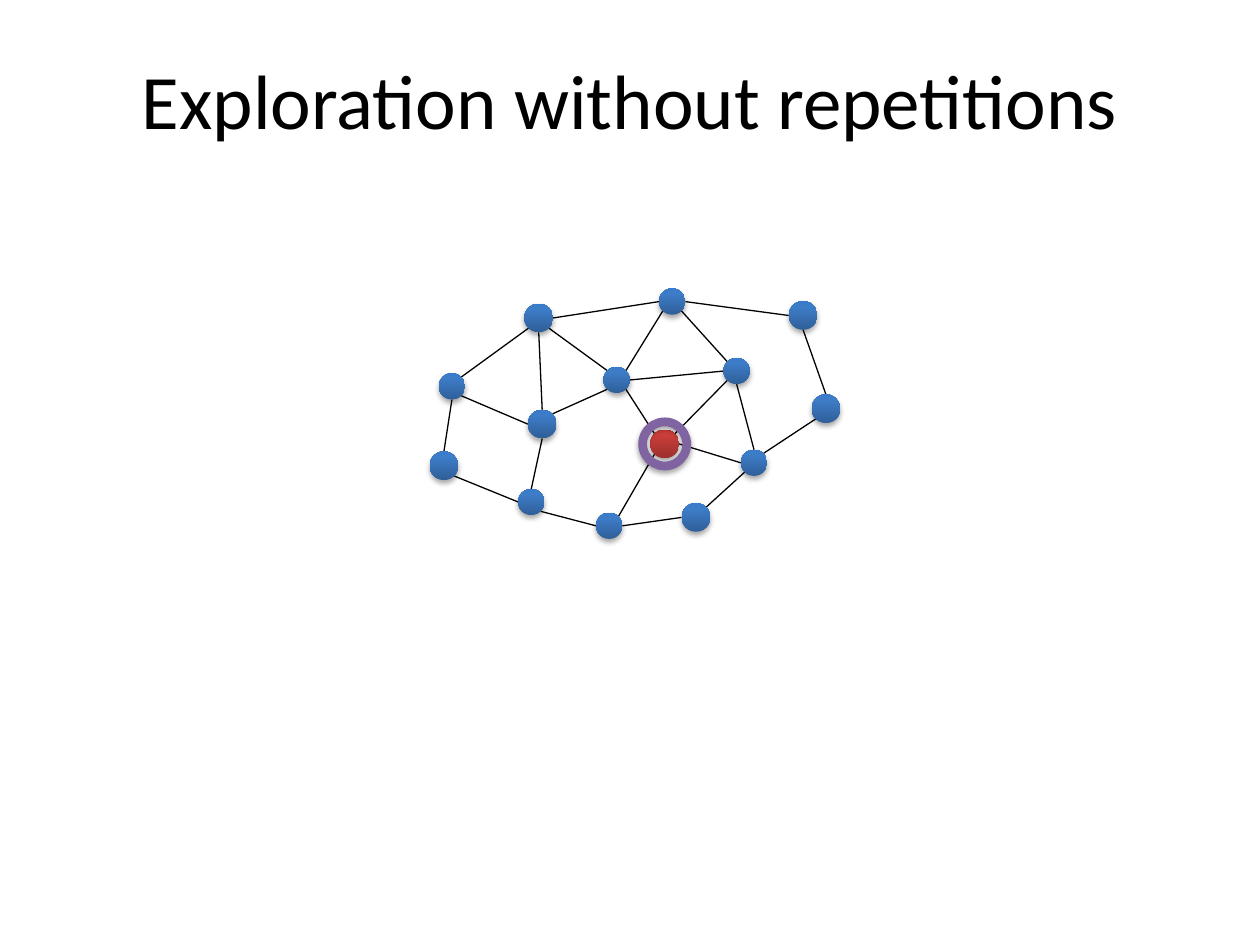
from copy import deepcopy
from dataclasses import dataclass
from math import cos, radians, sin

from lxml import etree
from pptx import Presentation
from pptx import util as u
from pptx.dml.color import RGBColor
from pptx.enum import shapes, text
from pptx.oxml.ns import qn

BLACK = RGBColor(0x00, 0x00, 0x00)
PURPLE = RGBColor(0x80, 0x64, 0xA2)
BLUES = (RGBColor(0x2F, 0x5F, 0x99), RGBColor(0x3D, 0x7C, 0xC7), RGBColor(0x3A, 0x7C, 0xCB))
REDS = (RGBColor(0x9C, 0x2F, 0x2D), RGBColor(0xCB, 0x3E, 0x3A), RGBColor(0xCE, 0x3B, 0x37))
STOPS = (0, 0.8, 1)
SMALL, BIG, RING = 0.53, 0.58, 0.89
SIDES = {side: radians(45 * i) for i, side in enumerate("E SE S SW W NW N NE".split())}


@dataclass
class Node:
    """A disc of the graph: centre and diameter in cm."""
    x: float
    y: float
    size: float
    hues: tuple = BLUES

    def site(self, side: str) -> tuple:
        """Point on the rim that faces a compass side."""
        turn, r = SIDES[side], self.size / 2
        return u.Cm(self.x + r * cos(turn)), u.Cm(self.y + r * sin(turn))


NODES = {
    "a": Node(10.86, 6.41, BIG),
    "b": Node(13.55, 6.08, SMALL),
    "c": Node(16.19, 6.36, BIG),
    "d": Node(9.11, 7.79, SMALL),
    "e": Node(12.43, 7.66, SMALL),
    "f": Node(14.85, 7.48, SMALL),
    "g": Node(16.65, 8.24, BIG),
    "h": Node(10.93, 8.55, BIG),
    "i": Node(8.95, 9.39, BIG),
    "j": Node(15.20, 9.33, SMALL),
    "k": Node(10.71, 10.12, SMALL),
    "l": Node(12.28, 10.60, SMALL),
    "m": Node(14.03, 10.43, BIG),
    "start": Node(13.40, 8.95, BIG, REDS),
}

# Each edge: node and side where it begins, node and side where it ends.
EDGES = [
    ("a", "E", "b", "W"), ("b", "E", "c", "W"), ("c", "S", "g", "N"),
    ("d", "NE", "a", "SW"), ("a", "S", "h", "N"), ("a", "SE", "e", "NW"),
    ("e", "NE", "b", "SW"), ("b", "SE", "f", "NW"), ("e", "E", "f", "W"),
    ("h", "NE", "e", "SW"), ("d", "SE", "h", "W"), ("d", "S", "i", "N"),
    ("i", "SE", "k", "W"), ("h", "S", "k", "N"), ("k", "SE", "l", "W"),
    ("l", "E", "m", "W"), ("j", "SW", "m", "NE"), ("g", "SW", "j", "NE"),
    ("j", "N", "f", "S"), ("e", "SE", "start", "NW"), ("f", "SW", "start", "NE"),
    ("start", "SW", "l", "NE"), ("start", "E", "j", "W"),
]


def cast(shape) -> None:
    """Give a shape a soft shadow below it."""
    shape.shadow.inherit = False
    effects = shape._element.spPr.find(qn("a:effectLst"))
    drop = etree.SubElement(effects, qn("a:outerShdw"), blurRad=str(u.Pt(3.1)),
                            dist=str(u.Pt(1.8)), dir="5400000", rotWithShape="0")
    tint = etree.SubElement(drop, qn("a:srgbClr"), val="000000")
    etree.SubElement(tint, qn("a:alpha"), val="35000")


def shade(shape, hues: tuple) -> None:
    """Fill with a three-stop gradient that runs upwards."""
    shape.fill.gradient()
    shape.fill.gradient_angle = 90
    stops = shape._element.spPr.find(".//" + qn("a:gsLst"))
    stops.append(deepcopy(stops[-1]))
    for stop, hue, place in zip(shape.fill.gradient_stops, hues, STOPS):
        stop.color.rgb = hue
        stop.position = place


def disc(slide, x: float, y: float, size: float):
    shape = slide.shapes.add_shape(
        shapes.MSO_SHAPE.OVAL, u.Cm(x - size / 2), u.Cm(y - size / 2), u.Cm(size), u.Cm(size))
    cast(shape)
    return shape


def draw_node(slide, node: Node) -> None:
    shape = disc(slide, node.x, node.y, node.size)
    shade(shape, node.hues)
    shape.line.fill.background()


def draw_edge(slide, tail: str, out: str, head: str, into: str) -> None:
    line = slide.shapes.add_connector(
        shapes.MSO_CONNECTOR.STRAIGHT, *NODES[tail].site(out), *NODES[head].site(into))
    line.line.color.rgb = BLACK
    line.line.width = u.Pt(0.75)
    etree.SubElement(line._element.spPr, qn("a:effectLst"))


def draw_ring(slide, node: Node) -> None:
    ring = disc(slide, node.x, node.y, RING)
    ring.fill.background()
    ring.line.color.rgb = PURPLE
    ring.line.width = u.Pt(5)


def draw_title(slide, words: str) -> None:
    frame = slide.shapes.add_textbox(u.Cm(1.27), u.Cm(0.64), u.Cm(22.86), u.Cm(2.69)).text_frame
    frame.word_wrap = True
    frame.vertical_anchor = text.MSO_ANCHOR.MIDDLE
    para = frame.paragraphs[0]
    para.text = words
    para.alignment = text.PP_ALIGN.CENTER
    para.font.name = "Calibri"
    para.font.size = u.Pt(44)
    para.font.color.rgb = BLACK


def main() -> None:
    deck = Presentation()
    deck.slide_width, deck.slide_height = u.Cm(25.4), u.Cm(19.05)
    slide = deck.slides.add_slide(deck.slide_layouts[6])
    for edge in EDGES:
        draw_edge(slide, *edge)
    for node in NODES.values():
        draw_node(slide, node)
    draw_title(slide, "Exploration without repetitions")
    draw_ring(slide, NODES["start"])
    deck.save("out.pptx")


if __name__ == "__main__":
    main()
